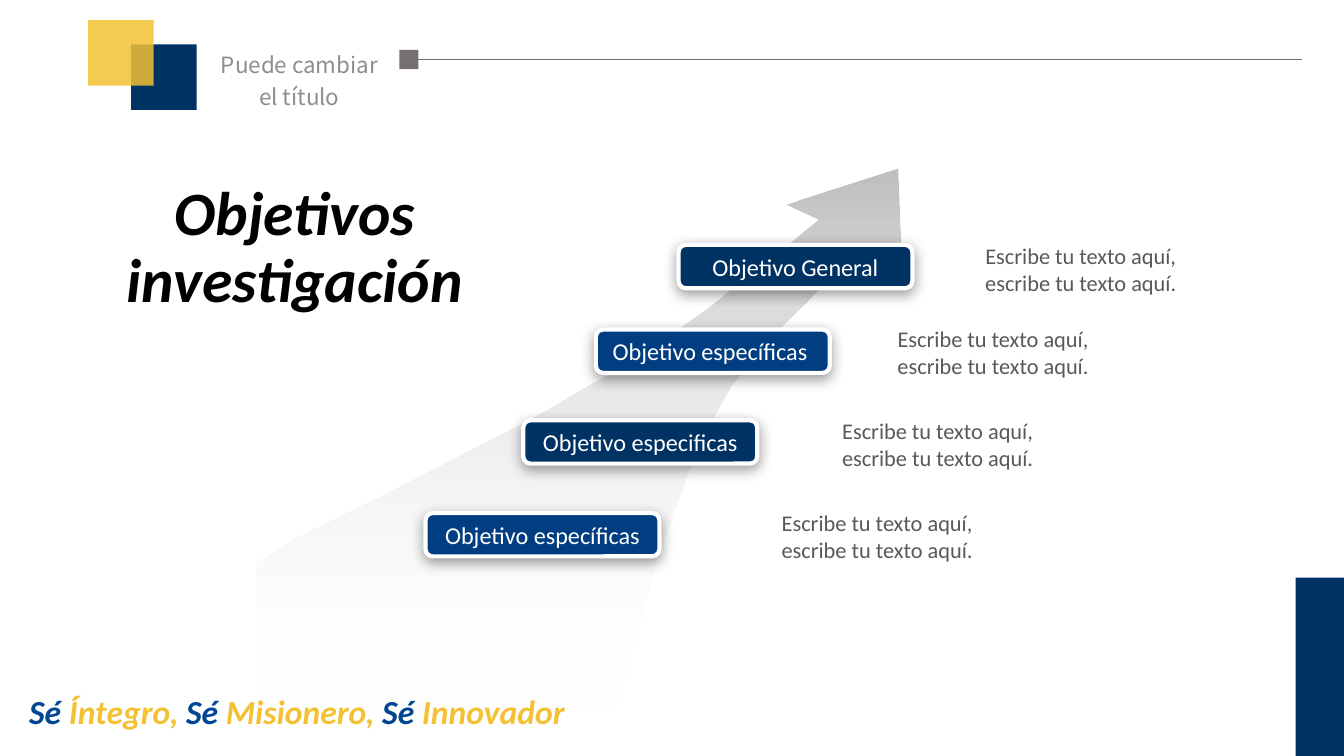
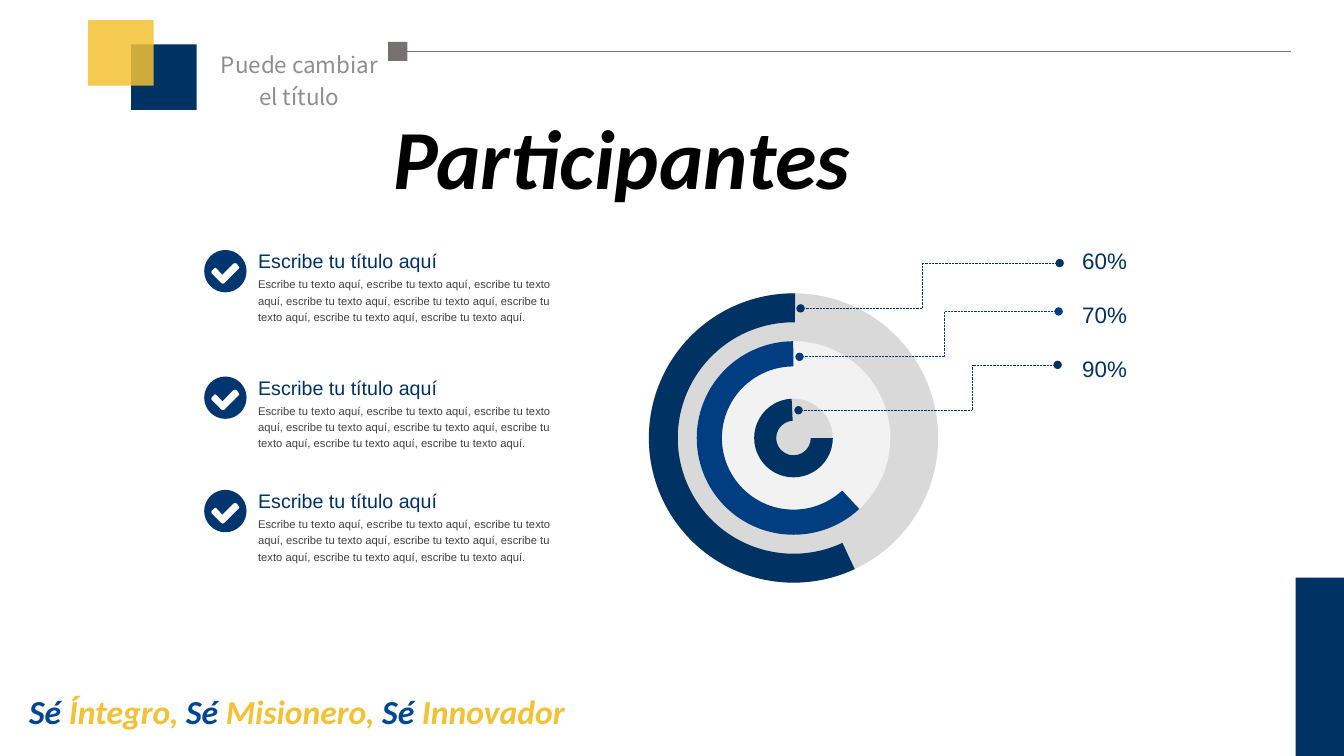
"""Build two research slides: the objectives arrow and the participants rings."""
from lxml import etree
from pptx import Presentation
from pptx import util as u
from pptx.dml.color import RGBColor
from pptx.enum import dml, shapes, text
from pptx.oxml.ns import qn

WIDTH, HEIGHT = u.Inches(13.33), u.Inches(7.5)
COLUMN, ROW = WIDTH / 133.3, HEIGHT / 75

NAVY = RGBColor(0x00, 0x32, 0x64)
BLUE = RGBColor(0x00, 0x3E, 0x81)
CHECK_BLUE = RGBColor(0x00, 0x36, 0x70)
MOTTO_BLUE = RGBColor(0x00, 0x46, 0x92)
GOLD = RGBColor(0xF3, 0xC1, 0x33)
TAUPE = RGBColor(0x76, 0x71, 0x71)
CAPTION_GREY = RGBColor(0x8E, 0x8E, 0x8E)
TEXT_GREY = RGBColor(0x59, 0x59, 0x59)
BODY_GREY = RGBColor(0x40, 0x40, 0x40)
ARROW_GREY = RGBColor(0xBF, 0xBF, 0xBF)
RING_GREY = RGBColor(0xD9, 0xD9, 0xD9)
RING_LIGHT = RGBColor(0xF2, 0xF2, 0xF2)
WHITE = RGBColor(0xFF, 0xFF, 0xFF)
BLACK = RGBColor(0x00, 0x00, 0x00)

HEAD_FONT, BODY_FONT, CAPTION_FONT = "Calibri", "Arial", "Noto Sans CJK SC"
INSETS = (0.9, 0.5)
QUARTER_CURVE = 0.55

MOTTO = [("Sé", MOTTO_BLUE), (" Íntegro, ", GOLD), ("Sé", MOTTO_BLUE),
         (" Misionero, ", GOLD), ("Sé", MOTTO_BLUE), (" Innovador", GOLD)]
HINT = "Escribe tu texto aquí, escribe tu texto aquí."
ITEM_TITLE = "Escribe tu título aquí"
ITEM_BODY = "Escribe tu texto aquí, " + "escribe tu texto aquí, " * 6 + "escribe tu texto aquí."

ARROW_OUTLINE = [
    (25.4, 55.8), (29.8, 53.1), (34.4, 50.8), (39.3, 48.4), (45.5, 45.2), (53.1, 41.3),
    (58, 38.4), (61.4, 36.6), (65.9, 33.6), (70, 30.7), (73.7, 27.7), (76.7, 25.4),
    (81.1, 21.8), (77.9, 20.3), (89, 16.7), (89.4, 26.5), (85.8, 24.2), (81.4, 28.5),
    (76.2, 33.8), (72.5, 38.3), (70.7, 41.5), (68.9, 44.8), (67.9, 47.8), (66.8, 50.7),
    (64.9, 56.3), (63.5, 61.6), (62.4, 65.8), (61, 70.6), (25.4, 70.6)]
BADGE = [(0, 2.1), (-2.1, 0), (0, -2.1), (2.1, 0), (0, 2.1)]
CHECK_MARK = [
    (1.35, -0.45), (1.15, -0.75), (0.95, -0.8), (0.8, -0.75), (-0.3, 0.35), (-0.85, -0.25),
    (-1, -0.35), (-1.1, -0.3), (-1.35, -0.05), (-1.4, 0.1), (-1.35, 0.25), (-0.4, 1.2),
    (-0.25, 1.25), (-0.1, 1.2), (1.35, -0.25), (1.4, -0.35)]

LEVELS = [
    ("Objetivo específicas", BLUE, 42.2, 50.9, 75.5, 50),
    ("Objetivo especificas", NAVY, 51.9, 41.7, 81.5, 40.9),
    ("Objetivo específicas ", BLUE, 59.1, 32.7, 87, 31.8),
    ("Objetivo General", NAVY, 67.3, 24.3, 95.7, 23.55)]
RINGS = [
    (28.7, RING_GREY, NAVY, (146.99, 54.4, 0.1)),
    (19.2, RING_LIGHT, BLUE, (136.3, 53.9, 0.13)),
    (7.8, RING_GREY, NAVY, (108, 52.37, 0.28))]
SHARES = [
    ("60%", NAVY, 79.4, 30.6, 0.47),
    ("70%", BLUE, 79.3, 35.4, 0.56),
    ("90%", NAVY, 79.2, 40.7, 0.67)]
ITEM_ROWS = (24.25, 36.8, 48.05)


def cells(left, top, width, height):
    """Turn grid columns and rows into lengths."""
    return [u.Emu(round(n * step))
            for n, step in zip((left, top, width, height), (COLUMN, ROW, COLUMN, ROW))]


def add_element(parent, tag, **attributes):
    """Append a drawing element with the given attributes."""
    values = {key: str(value) for key, value in attributes.items()}
    return etree.SubElement(parent, qn(tag), values)


def paint(shape, color):
    """Give a shape a plain fill with neither line nor shadow."""
    shape.shadow.inherit = False
    shape.line.fill.background()
    shape.fill.solid()
    shape.fill.fore_color.rgb = color


def block(slide, area, color, kind=shapes.MSO_SHAPE.RECTANGLE):
    """Add a flat preset shape."""
    shape = slide.shapes.add_shape(kind, *cells(*area))
    paint(shape, color)
    return shape


def fade(color_parent, percent):
    """Set the opacity of the RGB colour found below an element."""
    color = next(color_parent.iter(qn("a:srgbClr")))
    add_element(color, "a:alpha", val=percent * 1000)


def style_run(run, size, color, font, strong=False):
    """Format one run."""
    run.font.size, run.font.name = u.Pt(size), font
    run.font.color.rgb = color
    run.font.bold = run.font.italic = strong


def prepare_frame(frame, insets, anchor):
    """Set wrapping, margins and anchor of a text frame."""
    frame.word_wrap = True
    frame.margin_left = frame.margin_right = u.Emu(round(insets[0] * COLUMN))
    frame.margin_top = frame.margin_bottom = u.Emu(round(insets[1] * ROW))
    frame.vertical_anchor = anchor


def write(shape, wording, size, color, font, align=text.PP_ALIGN.CENTER,
          spacing=1.0, insets=(0, 0), anchor=text.MSO_ANCHOR.TOP, strong=False):
    """Put one formatted paragraph into a shape."""
    prepare_frame(shape.text_frame, insets, anchor)
    paragraph = shape.text_frame.paragraphs[0]
    paragraph.text = wording
    paragraph.alignment, paragraph.line_spacing = align, spacing
    style_run(paragraph.runs[0], size, color, font, strong)


def label(slide, area, *wording, **layout):
    """Add a text box with one paragraph."""
    write(slide.shapes.add_textbox(*cells(*area)), *wording, **layout)


def outline(slide, contours, color):
    """Add a freeform made of closed contours."""
    paths = [[(round(x * COLUMN), round(y * ROW)) for x, y in contour] for contour in contours]
    builder = slide.shapes.build_freeform(*paths[0][0], scale=1.0)
    builder.add_line_segments(paths[0][1:], close=True)
    for contour in paths[1:]:
        builder.move_to(*contour[0])
        builder.add_line_segments(contour[1:], close=True)
    shape = builder.convert_to_shape()
    paint(shape, color)
    return shape


def round_badge(shape):
    """Bend the first four sides of a freeform into quarter circles."""
    steps = list(next(shape._element.iter(qn("a:path"))))[:5]
    corners = [(int(pt.get("x")), int(pt.get("y"))) for step in steps for pt in step]
    center = [sum(values) / 4 for values in zip(*corners[:4])]
    for step, start, end in zip(steps[1:], corners, corners[1:]):
        leave = [a + QUARTER_CURVE * (b - c) for a, b, c in zip(start, end, center)]
        arrive = [b + QUARTER_CURVE * (a - c) for a, b, c in zip(start, end, center)]
        curve = etree.Element(qn("a:cubicBezTo"))
        for x, y in (leave, arrive, end):
            add_element(curve, "a:pt", x=round(x), y=round(y))
        step.getparent().replace(step, curve)


def connector(slide, kind, start, end, color):
    """Add a thin connector without shadow."""
    line = slide.shapes.add_connector(kind, *cells(*start, *end))
    line.line.color.rgb = color
    line.line.width = u.Pt(0.5)
    add_element(line._element.spPr, "a:effectLst")
    return line


def header(slide, rule_left, rule_top):
    """Add the emblem squares, the caption and the rule."""
    marker = block(slide, (rule_left, rule_top, 1.9, 1.9), TAUPE)
    middle = rule_top + 0.95
    rule = connector(slide, shapes.MSO_CONNECTOR.STRAIGHT, (rule_left + 89.5, middle),
                     (rule_left + 1.9, middle), TAUPE)
    rule.end_connect(marker, 3)
    label(slide, (21, 4.5, 17.4, 3.6), "Puede cambiar el título", 16, CAPTION_GREY,
          CAPTION_FONT, spacing=1.2)
    block(slide, (13, 4.4, 6.5, 6.5), NAVY)
    front = block(slide, (8.75, 2, 6.5, 6.5), GOLD)
    fade(front._element.spPr, 85)


def footer(slide):
    """Add the motto and the corner band."""
    frame = slide.shapes.add_textbox(*cells(1.9, 68.1, 60, 5)).text_frame
    prepare_frame(frame, (1, 0.5), text.MSO_ANCHOR.TOP)
    for wording, color in MOTTO:
        run = frame.paragraphs[0].add_run()
        run.text = wording
        style_run(run, 24, color, HEAD_FONT, strong=True)
    block(slide, (128.5, 57.3, 4.8, 17.7), NAVY)


def title(slide, area, wording, size):
    """Add the slide title."""
    label(slide, area, wording, size, BLACK, HEAD_FONT, spacing=0.9, insets=(1, 0.5),
          anchor=text.MSO_ANCHOR.BOTTOM, strong=True)


def rising_arrow(slide):
    """Add the arrow that fades out towards its foot."""
    arrow = outline(slide, [ARROW_OUTLINE], ARROW_GREY)
    arrow.fill.gradient()
    arrow.fill.gradient_angle = 270
    top, foot = arrow.fill.gradient_stops
    top.color.rgb, foot.color.rgb = ARROW_GREY, WHITE
    top.position, foot.position = 0, 1
    fade(list(arrow._element.iter(qn("a:gs")))[1], 0)


def objective(slide, wording, color, left, top):
    """Add a rounded plate with a white rim and a soft shadow."""
    plate = block(slide, (left, top, 23.2, 4.3), color, shapes.MSO_SHAPE.ROUNDED_RECTANGLE)
    plate.line.color.rgb = WHITE
    plate.line.width = u.Pt(3)
    effects = plate._element.spPr.find(qn("a:effectLst"))
    shadow = add_element(effects, "a:outerShdw", blurRad=u.Pt(10), dist=u.Pt(3),
                         dir=90 * 60000, algn="t", rotWithShape=0)
    add_element(shadow, "a:srgbClr", val=BLACK)
    fade(shadow, 40)
    write(plate, wording, 17.3, WHITE, HEAD_FONT, insets=INSETS, anchor=text.MSO_ANCHOR.MIDDLE)


def hint(slide, left, top):
    """Add the unfilled box that explains an objective."""
    box = block(slide, (left, top, 23, 6.3), WHITE)
    box.fill.background()
    box.line.color.rgb = WHITE
    box.line.width = u.Pt(0.75)
    box.line.dash_style = dml.MSO_LINE.DASH
    write(box, HINT, 16, TEXT_GREY, HEAD_FONT, insets=INSETS)


def ring(slide, diameter, base_color, arc_color, arc):
    """Add a disc and its arc around the common centre."""
    area = (78.7 - diameter / 2, 43.45 - diameter / 2, diameter, diameter)
    block(slide, area, base_color, shapes.MSO_SHAPE.OVAL)
    band = block(slide, area, arc_color, shapes.MSO_SHAPE.BLOCK_ARC)
    band.rotation = 180
    for index, value in enumerate(arc):
        band.adjustments[index] = value


def leader(slide, left, top, color, bend):
    """Add a dotted elbow leader with round ends."""
    elbow = connector(slide, shapes.MSO_CONNECTOR.ELBOW, (left, top),
                      (left + 25.7, top - 4.5), color)
    elbow.line.dash_style = dml.MSO_LINE.ROUND_DOT
    properties = elbow._element.spPr
    for end in ("a:headEnd", "a:tailEnd"):
        add_element(properties.find(qn("a:ln")), end, type="oval")
    guides = next(properties.iter(qn("a:avLst")))
    add_element(guides, "a:gd", name="adj1", fmla=f"val {round(bend * 100000)}")


def checked_item(slide, top):
    """Add a check badge with a heading and a paragraph."""
    x, y = 22.35, top + 2.65
    badge = outline(slide, [[(x + dx, y + dy) for dx, dy in contour]
                            for contour in (BADGE, CHECK_MARK)], CHECK_BLUE)
    round_badge(badge)
    for offset, height, wording, size, color in (
            (0, 2.6, ITEM_TITLE, 14, NAVY), (3.05, 4.7, ITEM_BODY, 8, BODY_GREY)):
        label(slide, (25.6, top + offset, 30.2, height), wording, size, color, BODY_FONT,
              align=text.PP_ALIGN.LEFT, spacing=1.2)


def objectives_slide(slide):
    """Fill the objectives slide."""
    header(slide, 39.6, 4.95)
    rising_arrow(slide)
    for wording, color, left, top, hint_left, hint_top in LEVELS:
        objective(slide, wording, color, left, top)
        hint(slide, hint_left, hint_top)
    footer(slide)
    title(slide, (9.8, 17.7, 38.9, 14.1), "Objetivos investigación", 44)


def participants_slide(slide):
    """Fill the participants slide."""
    header(slide, 38.5, 4.15)
    for details in RINGS:
        ring(slide, *details)
    for index, (share, color, left, top, bend) in enumerate(SHARES):
        label(slide, (106.9, 23.95 + 5.35 * index, 5.3, 2.9), share, 16, NAVY, BODY_FONT,
              spacing=1.2)
        leader(slide, left, top, color, bend)
    for top in ITEM_ROWS:
        checked_item(slide, top)
    footer(slide)
    title(slide, (16, 12.6, 91.3, 8.5), "Participantes", 60)


def main():
    """Build and save the presentation."""
    deck = Presentation()
    deck.slide_width, deck.slide_height = WIDTH, HEIGHT
    for fill_slide in (objectives_slide, participants_slide):
        fill_slide(deck.slides.add_slide(deck.slide_layouts[6]))
    deck.save("out.pptx")


if __name__ == "__main__":
    main()
